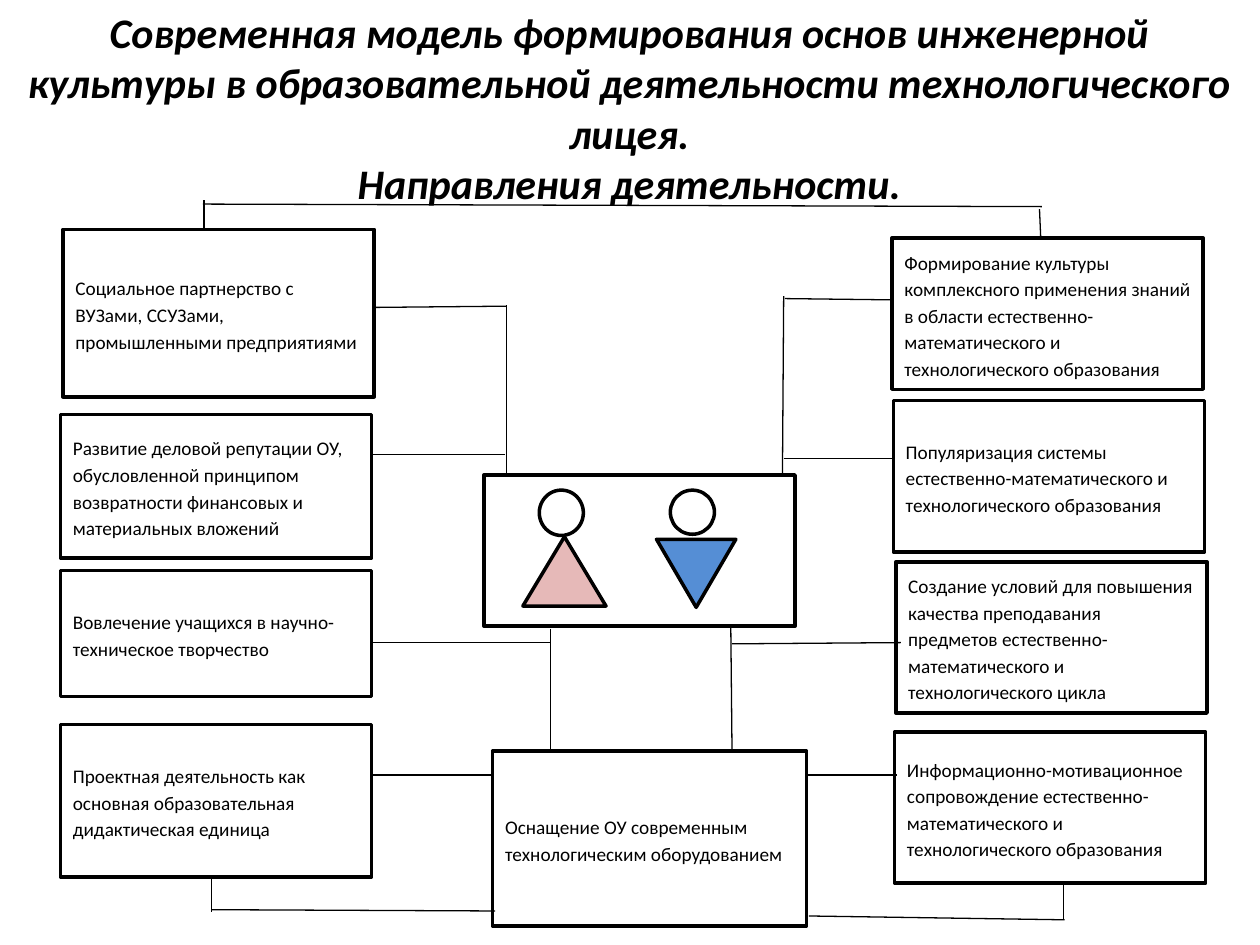
from pptx import Presentation
from pptx.dml.color import RGBColor
from pptx.enum.shapes import MSO_CONNECTOR as CONN, MSO_SHAPE as SHAPE
from pptx.enum.text import MSO_ANCHOR as ANCHOR, MSO_AUTO_SIZE as AUTO, PP_ALIGN as ALIGN
from pptx.oxml.ns import qn
from pptx.util import Inches, Pt
from lxml.etree import SubElement

FONT, BLACK, WHITE = "Calibri", "000000", "FFFFFF"
PINK, BLUE = "E6B9B8", "558ED5"
BOX_W, RIGHT_H = 2.47, 1.2

TITLE = [
    "Современная модель формирования основ инженерной культуры "
    "в образовательной деятельности технологического лицея.",
    "Направления деятельности.",
]

LEFT_BOXES = [
    (0.5, 1.82, 1.33, "Социальное партнерство с ВУЗами, ССУЗами, промышленными предприятиями"),
    (0.48, 3.29, 1.14, "Развитие деловой репутации ОУ, обусловленной принципом возвратности "
                       "финансовых и материальных вложений"),
    (0.48, 4.53, 1, "Вовлечение учащихся в научно-техническое творчество"),
    (0.48, 5.75, 1.21, "Проектная деятельность как основная образовательная дидактическая единица"),
]

RIGHT_BOXES = [
    (7.08, 1.89, "Формирование культуры комплексного применения знаний в области "
                 "естественно-математического и технологического образования"),
    (7.09, 3.18, "Популяризация системы естественно-математического и технологического образования"),
    (7.11, 4.46, "Создание условий для повышения качества преподавания предметов "
                 "естественно-математического и технологического цикла"),
    (7.1, 5.81, "Информационно-мотивационное сопровождение естественно-математического "
                "и технологического образования"),
]

TOP_LINES = [
    (1.62, 1.81, 1.62, 1.59), (1.61, 1.62, 8.27, 1.64), (8.25, 1.66, 8.26, 1.89),
]
LEFT_LINES = [
    (4.02, 3.78, 4.02, 2.42), (4.02, 2.43, 2.97, 2.44), (4.01, 3.61, 2.95, 3.61),
    (4.37, 4.99, 4.37, 5.96), (4.37, 5.1, 2.95, 5.1), (2.96, 6.15, 3.92, 6.15),
    (1.68, 6.98, 1.68, 7.24), (1.68, 7.22, 3.93, 7.23),
]
RIGHT_LINES = [
    (6.21, 3.78, 6.22, 2.35), (6.23, 2.37, 7.09, 2.38), (6.22, 3.64, 7.1, 3.64),
    (5.8, 4.98, 5.81, 5.97), (5.81, 5.11, 7.15, 5.1), (6.4, 6.15, 7.12, 6.15),
    (8.44, 7.3, 8.44, 7.02), (6.42, 7.27, 8.45, 7.3),
]


def rgb(value):
    """Return the colour for a hex string."""
    return RGBColor.from_string(value)


def format_runs(p, size, bold=False, italic=False):
    """Give every run of a paragraph its font."""
    for r in p.runs:
        r.font.name, r.font.size = FONT, Pt(size)
        r.font.bold, r.font.italic = bold, italic
        r.font.color.rgb = rgb(BLACK)


def add_title(s):
    """Fill and place the title."""
    sp = s.shapes.title
    sp.left, sp.top, sp.width, sp.height = map(Inches, (0.02, 0, 9.95, 1.72))
    tf = sp.text_frame
    tf.text = "\n".join(TITLE)
    tf.word_wrap, tf.auto_size, tf.vertical_anchor = True, AUTO.NONE, ANCHOR.TOP
    for p in tf.paragraphs:
        p.alignment = ALIGN.CENTER
        format_runs(p, 24, bold=True, italic=True)


def add_figure(s, kind, x, y, w, h, fill=WHITE):
    """Add a filled preset shape with a black outline."""
    sp = s.shapes.add_shape(kind, *map(Inches, (x, y, w, h)))
    sp.shadow.inherit = False
    sp.fill.solid()
    sp.fill.fore_color.rgb = rgb(fill)
    sp.line.color.rgb = rgb(BLACK)
    sp.line.width = Pt(2)
    return sp


def add_box(s, x, y, w, h, text):
    """Add a rectangle with left-aligned text."""
    tf = add_figure(s, SHAPE.RECTANGLE, x, y, w, h).text_frame
    tf.text = text
    tf.word_wrap, tf.vertical_anchor = True, ANCHOR.MIDDLE
    p = tf.paragraphs[0]
    p.alignment, p.line_spacing, p.space_after = ALIGN.LEFT, 1.15, Pt(10)
    format_runs(p, 11)


def add_line(s, *ends):
    """Add a thin straight black connector."""
    line = s.shapes.add_connector(CONN.STRAIGHT, *map(Inches, ends))
    line.line.color.rgb = rgb(BLACK)
    line.line.width = Pt(0.75)
    SubElement(line._element.spPr, qn("a:effectLst"))


def add_people(s):
    """Add the girl and the boy in the central frame."""
    add_figure(s, SHAPE.RECTANGLE, 3.84, 3.77, BOX_W, 1.2)
    add_figure(s, SHAPE.OVAL, 4.28, 3.89, 0.35, 0.36)
    add_figure(s, SHAPE.OVAL, 5.32, 3.89, 0.35, 0.35)
    add_figure(s, SHAPE.ISOSCELES_TRIANGLE, 4.15, 4.26, 0.66, 0.55, PINK)
    boy = add_figure(s, SHAPE.ISOSCELES_TRIANGLE, 5.21, 4.28, 0.63, 0.54, BLUE)
    boy.rotation = 180


def main():
    """Build the slide and save it."""
    prs = Presentation()
    prs.slide_width, prs.slide_height = Inches(10), Inches(7.5)
    s = prs.slides.add_slide(prs.slide_layouts[5])
    add_title(s)
    for x, y, h, text in LEFT_BOXES:
        add_box(s, x, y, BOX_W, h, text)
    for x, y, text in RIGHT_BOXES:
        add_box(s, x, y, BOX_W, RIGHT_H, text)
    add_box(s, 3.91, 5.96, 2.49, 1.39, "Оснащение ОУ современным технологическим оборудованием")
    add_people(s)
    for ends in TOP_LINES + LEFT_LINES + RIGHT_LINES:
        add_line(s, *ends)
    prs.save("out.pptx")


if __name__ == "__main__":
    main()
